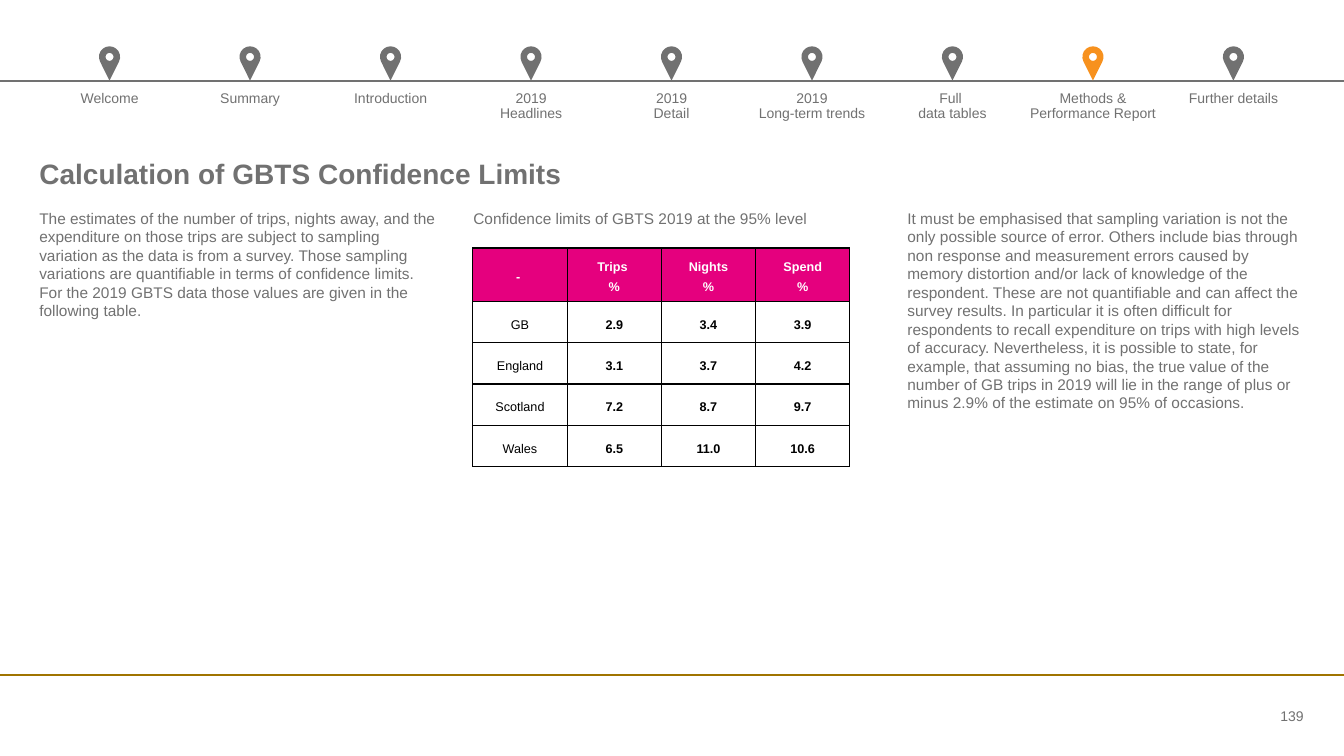
"""Builds the slide on GBTS confidence limits with its navigation strip."""
import math
from dataclasses import dataclass

import lxml.etree
import pptx
import pptx.dml.color
import pptx.enum.shapes
import pptx.enum.text
import pptx.oxml.ns
import pptx.util

ALIGN = pptx.enum.text.PP_ALIGN
ANCHOR = pptx.enum.text.MSO_ANCHOR
inches = pptx.util.Inches


@dataclass(frozen=True)
class Theme:
    font: str = "Arial"
    grey: str = "717171"
    orange: str = "F7911E"
    pink: str = "E5007E"
    gold: str = "A07400"
    black: str = "000000"
    white: str = "FFFFFF"
    title_size: int = 20
    body_size: int = 11
    small_size: int = 10
    table_size: int = 9


THEME = Theme()
WIDTH, HEIGHT = 13.33, 7.5
MARGIN = 0.39
NAV_STEP = 12.54 / 9
TEXT_STEP, TEXT_WIDTH = 4.305, 3.94
TEXT_TOP = 2.07
ROUTE_Y = 0.8

STOPS = ["Welcome", "Summary", "Introduction", "2019\nHeadlines", "2019\nDetail",
         "2019\nLong-term trends", "Full \ndata tables",
         "Methods & Performance Report", "Further details"]
CURRENT_STOP = 7
LIMITS = [["- ", "Trips \n%", "Nights\n%", "Spend\n%"],
          ["GB", "2.9", "3.4", "3.9"],
          ["England", "3.1", "3.7", "4.2"],
          ["Scotland", "7.2", "8.7", "9.7"],
          ["Wales", "6.5", "11.0", "10.6"]]
COLUMN_TEXTS = [
    "The estimates of the number of trips, nights away, and the expenditure on those trips "
    "are subject to sampling variation as the data is from a survey. Those sampling variations "
    "are quantifiable in terms of confidence limits. For the 2019 GBTS data those values are "
    "given in the following table.",
    "Confidence limits of GBTS 2019 at the 95% level",
    "It must be emphasised that sampling variation is not the only possible source of error. "
    "Others include bias through non response and measurement errors caused by memory distortion "
    "and/or lack of knowledge of the respondent. These are not quantifiable and can affect the "
    "survey results. In particular it is often difficult for respondents to recall expenditure "
    "on trips with high levels of accuracy. Nevertheless, it is possible to state, for example, "
    "that assuming no bias, the true value of the number of GB trips in 2019 will lie in the "
    "range of plus or minus 2.9% of the estimate on 95% of occasions.",
]


def rgb(colour):
    return pptx.dml.color.RGBColor.from_string(colour)


def write(frame, text, size, colour=THEME.grey, bold=False, align=ALIGN.LEFT, spacing=None):
    for index, line in enumerate(text.split("\n")):
        paragraph = frame.add_paragraph() if index else frame.paragraphs[0]
        paragraph.alignment = align
        paragraph.space_before = pptx.util.Pt(0)
        if spacing:
            paragraph.line_spacing = spacing
        run = paragraph.add_run()
        run.text = line
        run.font.name = THEME.font
        run.font.size = pptx.util.Pt(size)
        run.font.bold = bold
        run.font.color.rgb = rgb(colour)


def prepare_frame(frame, anchor):
    frame.word_wrap = True
    frame.auto_size = pptx.enum.text.MSO_AUTO_SIZE.NONE
    frame.vertical_anchor = anchor
    frame.margin_left = frame.margin_right = frame.margin_top = frame.margin_bottom = 0


def add_text(slide, left, top, width, height, text, size, anchor=ANCHOR.TOP, **style):
    frame = slide.shapes.add_textbox(*map(inches, (left, top, width, height))).text_frame
    prepare_frame(frame, anchor)
    write(frame, text, size, **style)


def add_title(slide, text):
    title = slide.shapes.title
    title.left, title.top = inches(MARGIN), inches(1.54)
    title.width, title.height = inches(12.52), inches(0.35)
    prepare_frame(title.text_frame, ANCHOR.BOTTOM)
    write(title.text_frame, text, THEME.title_size, bold=True)


def add_rule(slide, y, colour, weight):
    rule = slide.shapes.add_connector(pptx.enum.shapes.MSO_CONNECTOR.STRAIGHT,
                                      0, inches(y), inches(WIDTH), inches(y))
    rule.line.color.rgb = rgb(colour)
    rule.line.width = pptx.util.Pt(weight)
    lxml.etree.SubElement(rule.line._get_or_add_ln().getparent(),
                          pptx.oxml.ns.qn("a:effectLst"))


def arc(x, y, radius, start, end, steps=12):
    angles = [start + (end - start) * step / steps for step in range(steps + 1)]
    return [(inches(x + radius * math.cos(a)), inches(y + radius * math.sin(a)))
            for a in angles]


def add_pin(slide, x, colour):
    radius, hole = 0.105, 0.04
    head_y = ROUTE_Y - 0.235
    tangent = math.acos(radius / (ROUTE_Y - head_y))
    head = arc(x, head_y, radius, math.pi / 2 + tangent, math.pi * 5 / 2 - tangent)
    eye = arc(x, head_y, hole, 0, -2 * math.pi)
    tip = (inches(x), inches(ROUTE_Y))
    outline = slide.shapes.build_freeform(*tip, scale=1.0)
    outline.add_line_segments(head, close=True)
    outline.move_to(*eye[0])
    outline.add_line_segments(eye[1:-1], close=True)
    pin = outline.convert_to_shape()
    pin.shadow.inherit = False
    pin.fill.solid()
    pin.fill.fore_color.rgb = rgb(colour)
    pin.line.fill.background()


def add_grid(slide, left, top, column_width, row_heights, columns):
    frame = slide.shapes.add_table(len(row_heights), columns, inches(left), inches(top),
                                   inches(column_width * columns), inches(sum(row_heights)))
    table = frame.table
    table.first_row = table.horz_banding = False
    for column in table.columns:
        column.width = inches(column_width)
    for row, height in zip(table.rows, row_heights):
        row.height = inches(height)
    return table


def set_margins(cell, side):
    cell.margin_left = cell.margin_right = inches(side)
    cell.margin_top = cell.margin_bottom = 0


def add_borders(cell, colour):
    properties = cell._tc.get_or_add_tcPr()
    for index, edge in enumerate(("lnL", "lnR", "lnT", "lnB")):
        border = pptx.oxml.parse_xml(
            f'<a:{edge} {pptx.oxml.ns.nsdecls("a")} w="12700"><a:solidFill>'
            f'<a:srgbClr val="{colour}"/></a:solidFill></a:{edge}>')
        properties.insert(index, border)


def add_navigation(slide):
    add_rule(slide, ROUTE_Y, THEME.grey, 1.25)
    labels = add_grid(slide, MARGIN, 0.9, NAV_STEP, [0.35], len(STOPS))
    for index, stop in enumerate(STOPS):
        cell = labels.cell(0, index)
        set_margins(cell, 0)
        cell.fill.background()
        write(cell.text_frame, stop, THEME.small_size, align=ALIGN.CENTER)
        add_pin(slide, MARGIN + NAV_STEP * (index + 0.5),
                THEME.orange if index == CURRENT_STOP else THEME.grey)


def add_limits_table(slide):
    limits = add_grid(slide, 4.69, 2.46, 0.935, [0.53] + [0.41] * 4, len(LIMITS[0]))
    for row, values in enumerate(LIMITS):
        for column, value in enumerate(values):
            cell = limits.cell(row, column)
            header = row == 0
            set_margins(cell, 0.07)
            cell.vertical_anchor = ANCHOR.MIDDLE
            cell.fill.solid()
            cell.fill.fore_color.rgb = rgb(THEME.pink if header else THEME.white)
            add_borders(cell, THEME.black)
            write(cell.text_frame, value, THEME.table_size,
                  colour=THEME.white if header else THEME.black,
                  bold=header or column > 0, align=ALIGN.CENTER, spacing=pptx.util.Pt(14))


def main():
    deck = pptx.Presentation()
    deck.slide_width, deck.slide_height = inches(WIDTH), inches(HEIGHT)
    slide = deck.slides.add_slide(deck.slide_layouts[5])
    add_rule(slide, 6.7, THEME.gold, 1.5)
    add_navigation(slide)
    add_title(slide, "Calculation of GBTS Confidence Limits")
    for index, text in enumerate(COLUMN_TEXTS):
        add_text(slide, MARGIN + TEXT_STEP * index, TEXT_TOP, TEXT_WIDTH, 4.18, text,
                 THEME.body_size)
    add_limits_table(slide)
    add_text(slide, 11.87, 6.99, 1.06, 0.22, "139", THEME.small_size,
             anchor=ANCHOR.MIDDLE, align=ALIGN.RIGHT)
    deck.save("out.pptx")


if __name__ == "__main__":
    main()
